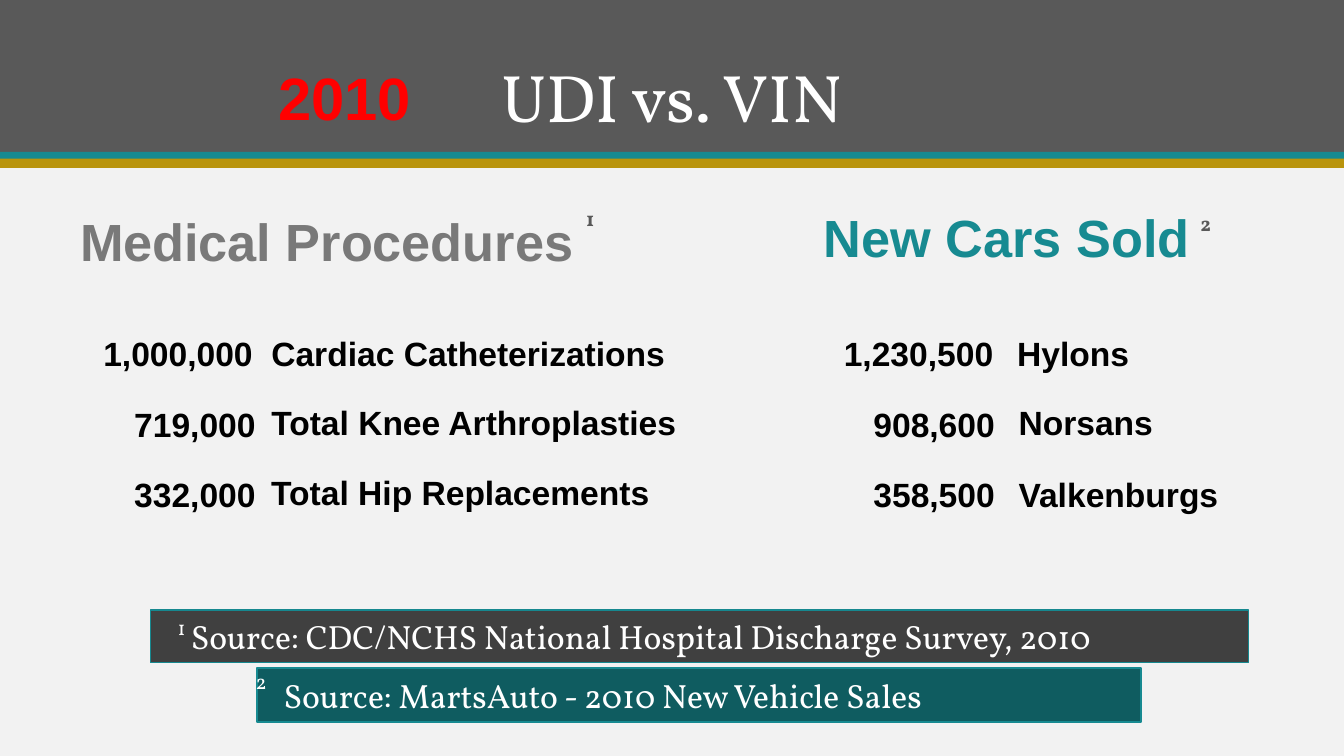
"""Build the UDI vs. VIN comparison slide for 2010."""
from pptx import Presentation
from pptx.dml.color import RGBColor
from pptx.enum.shapes import MSO_SHAPE
from pptx.enum.text import MSO_ANCHOR, PP_ALIGN
from pptx.util import Inches, Pt


def style(tf, text, size, font, color, bold=False, align=PP_ALIGN.LEFT):
    tf.text = text
    p = tf.paragraphs[0]
    p.alignment = align
    r = p.runs[0]
    r.font.size, r.font.name, r.font.bold = Pt(size), font, bold
    r.font.color.rgb = RGBColor.from_string(color)


def add_rect(box, fill, line=None):
    sp = s.shapes.add_shape(MSO_SHAPE.RECTANGLE, *[Inches(v) for v in box])
    sp.shadow.inherit = False
    sp.fill.solid()
    sp.fill.fore_color.rgb = RGBColor.from_string(fill)
    if line:
        sp.line.color.rgb = RGBColor.from_string(line)
        sp.line.width = Pt(1)
    else:
        sp.line.fill.background()
    return sp


prs = Presentation()
prs.slide_width = Inches(10)
prs.slide_height = prs.slide_width * 9 // 16
s = prs.slides.add_slide(prs.slide_layouts[5])
s.background.fill.solid()
s.background.fill.fore_color.rgb = RGBColor.from_string("F2F2F2")

for top, height, color in [(0, 1.13, "595959"), (1.13, 0.07, "178A91"), (1.18, 0.07, "B9940D")]:
    add_rect((0, top, 10, height), color)

title = s.shapes.title
title.element.getparent().append(title.element)
title.left, title.top, title.width, title.height = [Inches(v) for v in (1.06, 0.21, 7.88, 0.85)]
tf = title.text_frame
tf.margin_left = tf.margin_right = Inches(0.07)
tf.margin_top = tf.margin_bottom = Inches(0.04)
tf.vertical_anchor = MSO_ANCHOR.BOTTOM
style(tf, "UDI vs. VIN", 36, "Vollkorn", "FFFFFF", align=PP_ALIGN.CENTER)
tf.paragraphs[0].line_spacing = 0.9

sources = [
    ((1.12, 4.54, 8.17, 0.39), "404040", "16888F", 0.3,
     "Source: CDC/NCHS National Hospital Discharge Survey, 2010"),
    ((1.91, 4.97, 6.58, 0.4), "0F5C60", "178A91", 0.2,
     "Source: MartsAuto - 2010 New Vehicle Sales"),
]
for box, fill, line, indent, text in sources:
    tf = add_rect(box, fill, line).text_frame
    tf.margin_left = Inches(indent)
    tf.vertical_anchor = MSO_ANCHOR.MIDDLE
    style(tf, text, 18, "Vollkorn", "FFFFFF")

headings = [
    ((1.73, 0.4, 1.67, 0.64), "2010", 32, "FF0000"),
    ((0.29, 1.51, 4.28, 0.57), "Medical Procedures", 28, "797979"),
    ((5.7, 1.48, 3.58, 0.57), "New Cars Sold", 28, "178A91"),
]
for box, text, size, color in headings:
    tf = s.shapes.add_textbox(*[Inches(v) for v in box]).text_frame
    tf.word_wrap = True
    style(tf, text, size, "Arial", color, True, PP_ALIGN.CENTER)

figures = [
    (0.67, 2.43, 1.52, "1,000,000"), (1.92, 2.43, 3.42, "Cardiac Catheterizations"),
    (0.9, 2.96, 1.35, "719,000"), (1.92, 2.94, 3.32, "Total Knee Arthroplasties"),
    (0.9, 3.48, 1.35, "332,000"), (1.92, 3.46, 3.03, "Total Hip Replacements"),
    (6.18, 2.43, 1.48, "1,230,500"), (7.47, 2.43, 1.21, "Hylons"),
    (6.4, 2.96, 1.35, "908,600"), (7.48, 2.94, 1.52, "Norsans"),
    (6.4, 3.48, 1.35, "358,500"), (7.48, 3.48, 2.02, "Valkenburgs"),
]
for left, top, width, text in figures:
    tf = s.shapes.add_textbox(Inches(left), Inches(top), Inches(width), Inches(0.4)).text_frame
    tf.word_wrap = True
    style(tf, text, 18, "Arial", "000000", True)

notes = [
    (4.29, 1.48, "1", "595959", True), (8.86, 1.52, "2", "595959", True),
    (1.25, 4.53, "1", "FFFFFF", False), (1.83, 4.93, "2", "FFFFFF", False),
]
for left, top, text, color, bold in notes:
    tf = s.shapes.add_textbox(Inches(left), Inches(top), Inches(0.17), Inches(0.29)).text_frame
    tf.word_wrap = False
    style(tf, text, 11, "Vollkorn", color, bold)

prs.save("out.pptx")
